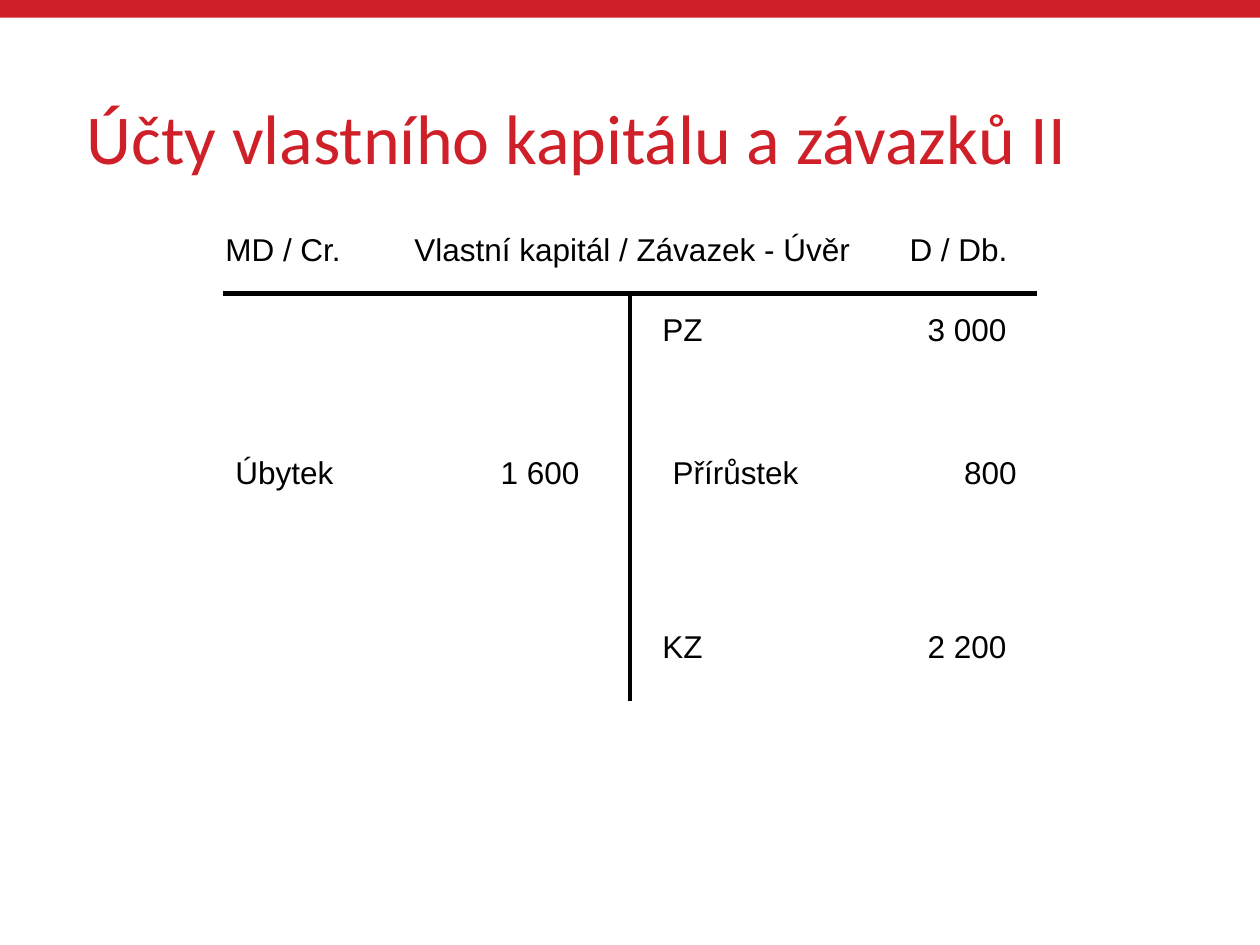
from lxml.etree import SubElement
from pptx import Presentation
from pptx.dml.color import RGBColor
from pptx.enum.shapes import MSO_CONNECTOR as Link, MSO_SHAPE as Shape
from pptx.enum.text import MSO_ANCHOR as Anchor, MSO_AUTO_SIZE as Fit, PP_ALIGN as Align
from pptx.oxml.ns import qn
from pptx.util import Inches, Pt

RED = RGBColor(0xCF, 0x1F, 0x28)
BLACK = RGBColor(0, 0, 0)

WIDTH, HEIGHT = 10, 7.5
MID = WIDTH / 2
ARM = 3.23              # half the bar of the T, and also its stem
LEFT, RIGHT = MID - ARM, MID + ARM
TOP = 2.33
HEAD = 1.78
ROW = 0.4
ENTRY = 3.07
TAB = 2.73              # right edge of the amounts inside an entry

HEADS = [
    ("MD / Cr.", 1.69, 1.42),
    ("Vlastní kapitál / Závazek - Úvěr", 3.19, 3.94),
    ("D / Db.", 7.12, 1.02),
]
ENTRIES = [
    ("PZ", "3 000", 5.16, 2.41),
    ("Úbytek", "1 600", LEFT, 3.55),
    ("Přírůstek", "800", 5.24, 3.55),
    ("KZ", "2 200", 5.16, 4.93),
]


def style(para, name, size, color):
    font = para.font
    font.name, font.size = name, Pt(size)
    font.color.rgb = color


def add_band(slide):
    band = slide.shapes.add_shape(Shape.RECTANGLE, 0, 0, Inches(WIDTH), Inches(0.14))
    band.shadow.inherit = False
    band.fill.solid()
    band.fill.fore_color.rgb = RED
    band.line.fill.background()


def set_title(slide, text):
    title = slide.shapes.title
    title.left, title.top = Inches(0.59), Inches(0.4)
    title.width, title.height = Inches(8.82), Inches(1.45)
    frame = title.text_frame
    frame.text = text
    frame.vertical_anchor = Anchor.MIDDLE
    para = frame.paragraphs[0]
    para.alignment = Align.LEFT
    para.line_spacing = 0.9
    style(para, "Calibri", 40, RED)


def add_line(slide, *ends):
    line = slide.shapes.add_connector(Link.STRAIGHT, *map(Inches, ends))
    line.line.color.rgb = BLACK
    line.line.width = Pt(2.5)
    SubElement(line._element.spPr, qn("a:effectLst"))


def add_text(slide, text, left, top, width):
    box = slide.shapes.add_textbox(*map(Inches, (left, top, width, ROW)))
    frame = box.text_frame
    frame.word_wrap = True
    frame.auto_size = Fit.SHAPE_TO_FIT_TEXT
    para = frame.paragraphs[0]
    para.text = text
    if "\t" in text:
        tabs = SubElement(para._p.get_or_add_pPr(), qn("a:tabLst"))
        SubElement(tabs, qn("a:tab"), pos=str(Inches(TAB)), algn="r")
    style(para, "Arial", 18, BLACK)


def main():
    deck = Presentation()
    deck.slide_width, deck.slide_height = Inches(WIDTH), Inches(HEIGHT)
    slide = deck.slides.add_slide(deck.slide_layouts[5])
    add_band(slide)
    set_title(slide, "Účty vlastního kapitálu a závazků II")
    add_line(slide, LEFT, TOP, RIGHT, TOP)
    add_line(slide, MID, TOP, MID, TOP + ARM)
    for text, left, width in HEADS:
        add_text(slide, text, left, HEAD, width)
    for label, amount, left, top in ENTRIES:
        add_text(slide, f"{label}\t{amount}", left, top, ENTRY)
    deck.save("out.pptx")


if __name__ == "__main__":
    main()
